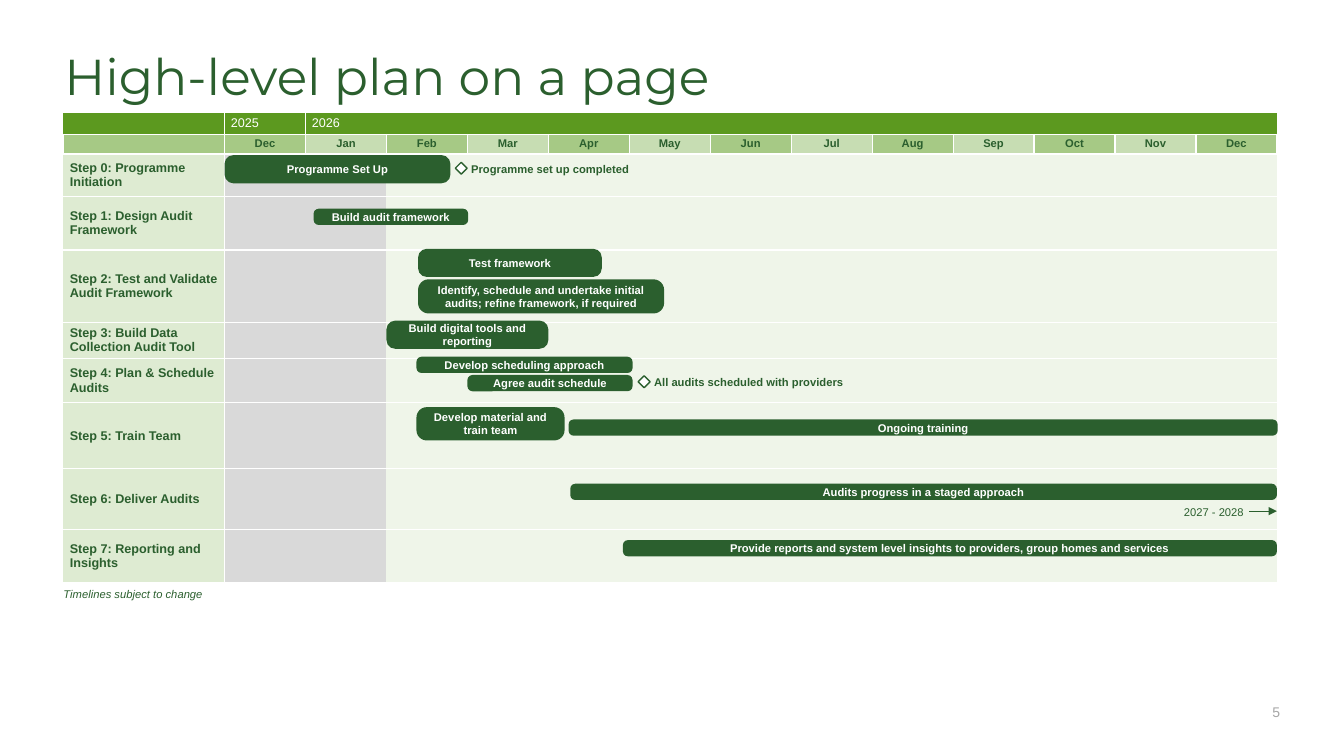
import pptx
import pptx.util
import pptx.dml.color
import pptx.enum.dml
import pptx.enum.shapes
import pptx.enum.text
import pptx.oxml
import pptx.oxml.ns
from itertools import accumulate

Cm, Pt = pptx.util.Cm, pptx.util.Pt
SHAPE = pptx.enum.shapes.MSO_SHAPE
ALIGN = pptx.enum.text.PP_ALIGN
ANCHOR = pptx.enum.text.MSO_ANCHOR

COLORS = {
    "dark": "2B5F2E", "year": "5C991F", "month": "A6C985", "month_alt": "C7DDB3",
    "step": "DEEBD2", "past": "D9D9D9", "open": "EFF5E9", "white": "FFFFFF", "number": "A6A6A6",
}
MONTHS = "Dec Jan Feb Mar Apr May Jun Jul Aug Sep Oct Nov Dec".split()
NO_TABLE_STYLE = "{2D5ABB26-0587-4C30-8999-92F81FD0307C}"

# Plan measures in cm
LABEL_W, MONTH_W = 4.06, 2.04
YEAR_H, MONTH_H = 0.55, 0.49
THIN, MARK = 0.41, 0.3

# Step name, row height in cm
STEPS = [
    ("Step 0: Programme Initiation", 1.07),
    ("Step 1: Design Audit Framework", 1.35),
    ("Step 2: Test and Validate Audit Framework", 1.82),
    ("Step 3: Build Data Collection Audit Tool", 0.91),
    ("Step 4: Plan & Schedule Audits", 1.12),
    ("Step 5: Train Team", 1.66),
    ("Step 6: Deliver Audits", 1.53),
    ("Step 7: Reporting and Insights", 1.33),
]
# Step, start and duration in months, offset in row and height in cm, text
BARS = [
    (0, 0, 2.79, 0.03, 0.71, "Programme Set Up"),
    (1, 1.1, 1.91, 0.31, THIN, "Build audit framework"),
    (2, 2.39, 2.27, -0.03, 0.71, "Test framework"),
    (2, 2.39, 3.04, 0.74, 0.86,
     "Identify, schedule and undertake initial audits; refine framework, if required"),
    (3, 2, 2, -0.04, 0.71, "Build digital tools and reporting"),
    (4, 2.37, 2.67, -0.04, THIN, "Develop scheduling approach"),
    (4, 3, 2.04, 0.42, THIN, "Agree audit schedule"),
    (5, 2.37, 1.83, 0.11, 0.84, "Develop material and train team"),
    (5, 4.25, 8.76, 0.42, THIN, "Ongoing training"),
    (6, 4.27, 8.73, 0.38, THIN, "Audits progress in a staged approach"),
    (7, 4.92, 8.08, 0.27, THIN,
     "Provide reports and system level insights to providers, group homes and services"),
]
# Step, start in months, offset in row in cm, text
MILESTONES = [
    (0, 2.85, 0.21, "Programme set up completed"),
    (4, 5.11, 0.44, "All audits scheduled with providers"),
]


def rgb(name):
    return pptx.dml.color.RGBColor.from_string(COLORS[name])


def write(tf, text, size=8, color="dark", font="Arial", bold=False, italic=False,
          align=ALIGN.LEFT, anchor=ANCHOR.TOP, inset=(0, 0), spacing=None):
    """Fill a text frame or cell; inset is (sides, top and bottom) in cm."""
    tf.word_wrap = True
    tf.vertical_anchor = anchor
    tf.margin_left = tf.margin_right = Cm(inset[0])
    tf.margin_top = tf.margin_bottom = Cm(inset[1])
    p = tf.paragraphs[0]
    p.alignment = align
    p.line_spacing = spacing
    r = p.add_run()
    r.text = text
    r.font.name, r.font.size = font, Pt(size)
    r.font.bold, r.font.italic = bold, italic
    r.font.color.rgb = rgb(color)


def add_label(slide, x, y, w, h, text, **fmt):
    sp = slide.shapes.add_textbox(Cm(x), Cm(y), Cm(w), Cm(h))
    write(sp.text_frame, text, **fmt)


def add_box(slide, kind, x, y, w, h, fill):
    sp = slide.shapes.add_shape(kind, Cm(x), Cm(y), Cm(w), Cm(h))
    sp.shadow.inherit = False
    sp.fill.solid()
    sp.fill.fore_color.rgb = rgb(fill)
    sp.line.fill.background()
    return sp


def paint(cell, fill, sides):
    """Give a cell white borders on the named sides, then its fill."""
    tc_pr = cell._tc.get_or_add_tcPr()
    for side in "LRTB":
        width, paint_xml = 0, "<a:noFill/>"
        if side in sides:
            width = Pt(1)
            paint_xml = f'<a:solidFill><a:srgbClr val="{COLORS["white"]}"/></a:solidFill>'
        tc_pr.append(pptx.oxml.parse_xml(
            f'<a:ln{side} {pptx.oxml.ns.nsdecls("a")} w="{width}">{paint_xml}</a:ln{side}>'))
    cell.fill.solid()
    cell.fill.fore_color.rgb = rgb(fill)


def write_cell(cell, text, **fmt):
    cell.vertical_anchor = fmt.pop("anchor", ANCHOR.TOP)
    cell.margin_left = cell.margin_right = Cm(0.16)
    cell.margin_top = cell.margin_bottom = Cm(0.08)
    write(cell.text_frame, text, anchor=None, inset=(0.16, 0.08), **fmt)


def add_grid(slide, x, y):
    heights = [YEAR_H, MONTH_H] + [h for _, h in STEPS]
    widths = [LABEL_W] + [MONTH_W] * len(MONTHS)
    table = slide.shapes.add_table(len(heights), len(widths), Cm(x), Cm(y),
                                   Cm(sum(widths)), Cm(sum(heights))).table
    table._tbl.tblPr.find(pptx.oxml.ns.qn("a:tableStyleId")).text = NO_TABLE_STYLE
    table.first_row = table.horz_banding = False
    for row, h in zip(table.rows, heights):
        row.height = Cm(h)
    for col, w in zip(table.columns, widths):
        col.width = Cm(w)

    for r in range(len(heights)):
        for c in range(len(widths)):
            cell = table.cell(r, c)
            cell.margin_top = cell.margin_bottom = 0
            cell.text_frame.paragraphs[0].font.size = Pt(8)
            if r == 0:
                paint(cell, "year", "TB" + ("R" if c < 2 else "") + ("L" if c in (1, 2) else ""))
            elif r == 1:
                paint(cell, "month" if c == 0 or c % 2 else "month_alt", "LRTB")
            elif c == 0:
                paint(cell, "step", "RTB")
            else:
                paint(cell, "past" if c < 3 else "open", "LTB" if c == 1 else "TB")

    table.cell(0, 2).merge(table.cell(0, len(MONTHS)))
    for c, year in enumerate(["2025", "2026"], 1):
        write_cell(table.cell(0, c), year, size=9, color="white")
    for c, month in enumerate(MONTHS, 1):
        write_cell(table.cell(1, c), month, bold=True, align=ALIGN.CENTER)
    for r, (step, _) in enumerate(STEPS, 2):
        table.cell(r, 3).merge(table.cell(r, len(MONTHS)))
        write_cell(table.cell(r, 0), step, size=9, bold=True, anchor=ANCHOR.MIDDLE)


def add_outlook_arrow(slide, x, y, w):
    ln = slide.shapes.add_connector(pptx.enum.shapes.MSO_CONNECTOR.STRAIGHT,
                                    Cm(x), Cm(y), Cm(x + w), Cm(y))
    ln.line.color.rgb = rgb("dark")
    ln.line.width = Pt(0.5)
    ns = pptx.oxml.ns.nsdecls("a")
    ln.line._get_or_add_ln().append(pptx.oxml.parse_xml(f'<a:tailEnd {ns} type="triangle"/>'))
    ln._element.spPr.append(pptx.oxml.parse_xml(f"<a:effectLst {ns}/>"))


def add_plan(slide, x, y):
    add_grid(slide, x, y)
    row_tops = list(accumulate((h for _, h in STEPS), initial=y + YEAR_H + MONTH_H))

    def month_x(months):
        return x + LABEL_W + months * MONTH_W

    for step, start, months, dy, h, text in BARS:
        sp = add_box(slide, SHAPE.ROUNDED_RECTANGLE, month_x(start), row_tops[step] + dy,
                     months * MONTH_W, h, "dark")
        sp.adjustments[0] = 0.31
        write(sp.text_frame, text, color="white", bold=True, align=ALIGN.CENTER,
              anchor=ANCHOR.MIDDLE, inset=(0.1, 0.1))

    for step, start, dy, text in MILESTONES:
        left, top = month_x(start), row_tops[step] + dy
        sp = add_box(slide, SHAPE.DIAMOND, left, top, MARK, MARK, "white")
        sp.line.color.rgb = rgb("dark")
        sp.line.width = Pt(1)
        add_label(slide, left + 0.4, top, 7.5, MARK, text, bold=True)

    add_label(slide, month_x(11.85), row_tops[6] + 0.92, 1.65, 0.4, "2027 - 2028")
    add_outlook_arrow(slide, month_x(12.66), row_tops[6] + 1.07, 0.34 * MONTH_W)
    add_label(slide, x, row_tops[-1] + 0.14, 5.94, 0.66, "Timelines subject to change", italic=True)


def set_title(slide, x, y, w, h, text):
    sp = slide.shapes.title
    sp.left, sp.top, sp.width, sp.height = Cm(x), Cm(y), Cm(w), Cm(h)
    write(sp.text_frame, text, size=36, font="Montserrat", anchor=ANCHOR.MIDDLE, spacing=0.7)


def main():
    prs = pptx.Presentation()
    prs.slide_width, prs.slide_height = Cm(33.87), Cm(19.05)
    slide = prs.slides.add_slide(prs.slide_layouts[5])
    set_title(slide, 1.62, 1.35, 30.6, 1.47, "High-level plan on a page")
    add_plan(slide, 1.6, 2.84)
    add_label(slide, 31.57, 17.75, 0.69, 0.41, "5", size=10, color="number",
              align=ALIGN.RIGHT, anchor=ANCHOR.BOTTOM)
    prs.save("out.pptx")


if __name__ == "__main__":
    main()
